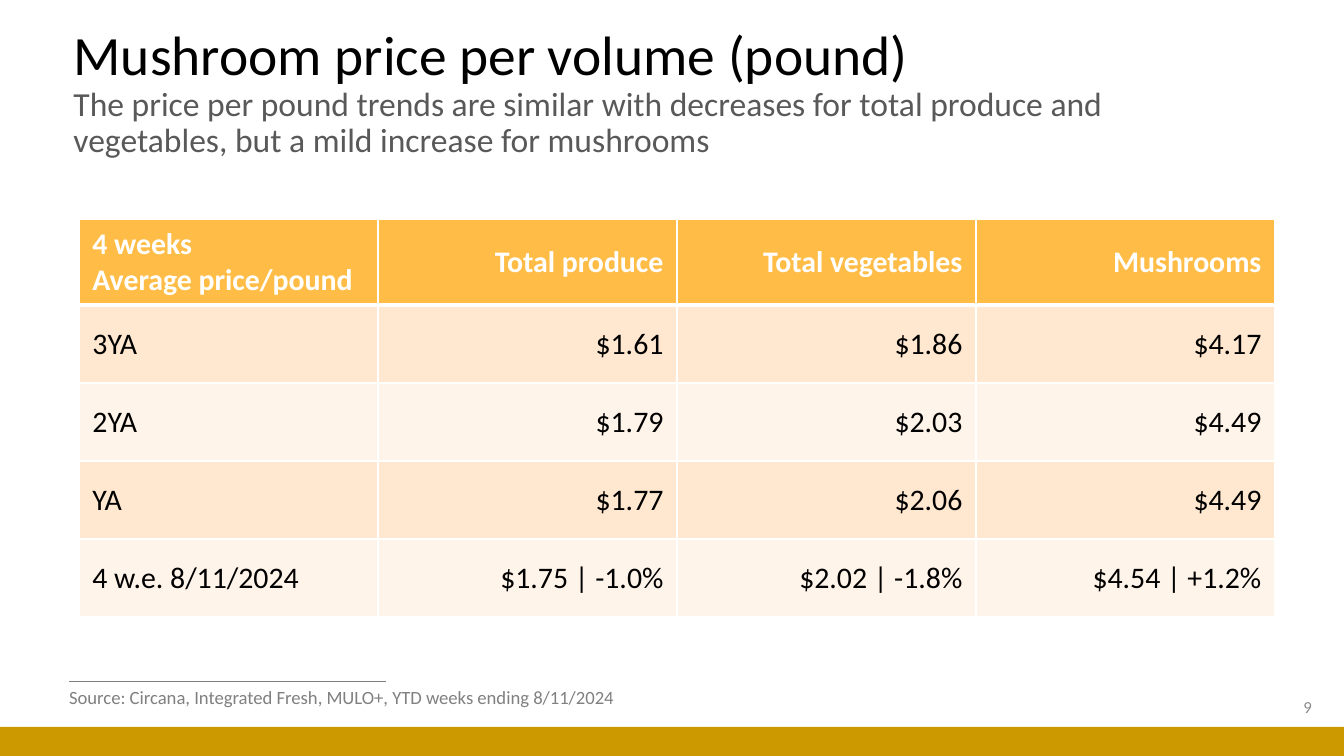
from dataclasses import dataclass

from lxml.etree import SubElement
from pptx import Presentation
from pptx.dml.color import RGBColor as RGB
from pptx.enum.shapes import MSO_CONNECTOR as CONN, MSO_SHAPE as SHAPE
from pptx.enum.text import MSO_ANCHOR as ANCHOR, MSO_AUTO_SIZE as AUTO, PP_ALIGN as ALIGN
from pptx.oxml.ns import qn
from pptx.util import Pt

EMU_PER_PX = 9144000 / 1344


@dataclass(frozen=True)
class Theme:
    font: str = "Calibri"
    black: str = "000000"
    white: str = "FFFFFF"
    subtitle: str = "595959"
    source: str = "808080"
    number: str = "8C8C8C"
    bar: str = "CC9900"
    header: str = "FFBD47"
    bands: tuple = ("FFE8CF", "FFF4E9")
    title_size: float = 29.7
    subtitle_size: float = 18
    table_size: float = 16
    source_size: float = 10
    number_size: float = 9


THEME = Theme()


def px(*values):
    return [round(v * EMU_PER_PX) for v in values]


def style(font, size, color, bold=False):
    font.name, font.size, font.bold = THEME.font, Pt(size), bold
    font.color.rgb = RGB.from_string(color)


prs = Presentation()
prs.slide_width, prs.slide_height = px(1344, 756)
s = prs.slides.add_slide(prs.slide_layouts[5])

# Footer rule and bar
rule = s.shapes.add_connector(CONN.STRAIGHT, *px(69, 682, 386, 682))
rule.line.color.rgb = RGB.from_string(THEME.source)
rule.line.width = Pt(0.5)
SubElement(rule.line._get_or_add_ln().getparent(), qn("a:effectLst"))

bar = s.shapes.add_shape(SHAPE.RECTANGLE, *px(0, 727, 1344, 29))
bar.shadow.inherit = False
bar.fill.solid()
bar.fill.fore_color.rgb = RGB.from_string(THEME.bar)
bar.line.fill.background()

# Title with its subtitle after a line break
title = s.shapes.title
title.left, title.top, title.width, title.height = px(60, 30, 1175, 128)
tf = title.text_frame
tf.text = ("Mushroom price per volume (pound)\v"
           "The price per pound trends are similar with decreases for total produce and "
           "vegetables, but a mild increase for mushrooms")
tf.word_wrap, tf.auto_size, tf.vertical_anchor = True, AUTO.NONE, ANCHOR.MIDDLE
p = tf.paragraphs[0]
p.alignment, p.line_spacing = ALIGN.LEFT, 0.9
style(p.runs[0].font, THEME.title_size, THEME.black)
style(p.runs[1].font, THEME.subtitle_size, THEME.subtitle)

# Slide number
number = s.shapes.add_textbox(*px(1023, 687, 302, 40))
tf = number.text_frame
tf.text = "9"
tf.word_wrap, tf.vertical_anchor = True, ANCHOR.MIDDLE
p = tf.paragraphs[0]
p.alignment = ALIGN.RIGHT
style(p.runs[0].font, THEME.number_size, THEME.number)

# Price table
ROWS = [
    ("4 weeks\nAverage price/pound", "Total produce", "Total vegetables", "Mushrooms"),
    ("3YA", "$1.61", "$1.86", "$4.17"),
    ("2YA", "$1.79", "$2.03", "$4.49"),
    ("YA", "$1.77", "$2.06", "$4.49"),
    ("4 w.e. 8/11/2024", "$1.75 | -1.0%", "$2.02 | -1.8%", "$4.54 | +1.2%"),
]
HEADER_H, ROW_H, COL_W = 86, 78, 299
table = s.shapes.add_table(
    len(ROWS), 4, *px(79, 219, 4 * COL_W, HEADER_H + 4 * ROW_H)).table
for col in table.columns:
    col.width = px(COL_W)[0]
for i, texts in enumerate(ROWS):
    is_header = i == 0
    table.rows[i].height = px(HEADER_H if is_header else ROW_H)[0]
    fill = THEME.header if is_header else THEME.bands[(i - 1) % 2]
    for j, text in enumerate(texts):
        cell = table.cell(i, j)
        cell.text = text
        cell.vertical_anchor = ANCHOR.MIDDLE
        for p in cell.text_frame.paragraphs:
            p.alignment = ALIGN.RIGHT if j else ALIGN.LEFT
            style(p.runs[0].font, THEME.table_size,
                  THEME.white if is_header else THEME.black, is_header)
        for side in "LRTB":
            thick = (is_header and side == "B") or (i == 1 and side == "T")
            ln = SubElement(cell._tc.get_or_add_tcPr(), qn(f"a:ln{side}"),
                            w=str(Pt(3 if thick else 1)))
            SubElement(SubElement(ln, qn("a:solidFill")), qn("a:srgbClr"), val=THEME.white)
        cell.fill.solid()
        cell.fill.fore_color.rgb = RGB.from_string(fill)

# Source line
source = s.shapes.add_textbox(*px(56, 679, 579, 36))
tf = source.text_frame
tf.text = "Source: Circana, Integrated Fresh, MULO+, YTD weeks ending 8/11/2024"
tf.word_wrap, tf.auto_size = False, AUTO.SHAPE_TO_FIT_TEXT
style(tf.paragraphs[0].runs[0].font, THEME.source_size, THEME.source)

prs.save("out.pptx")
